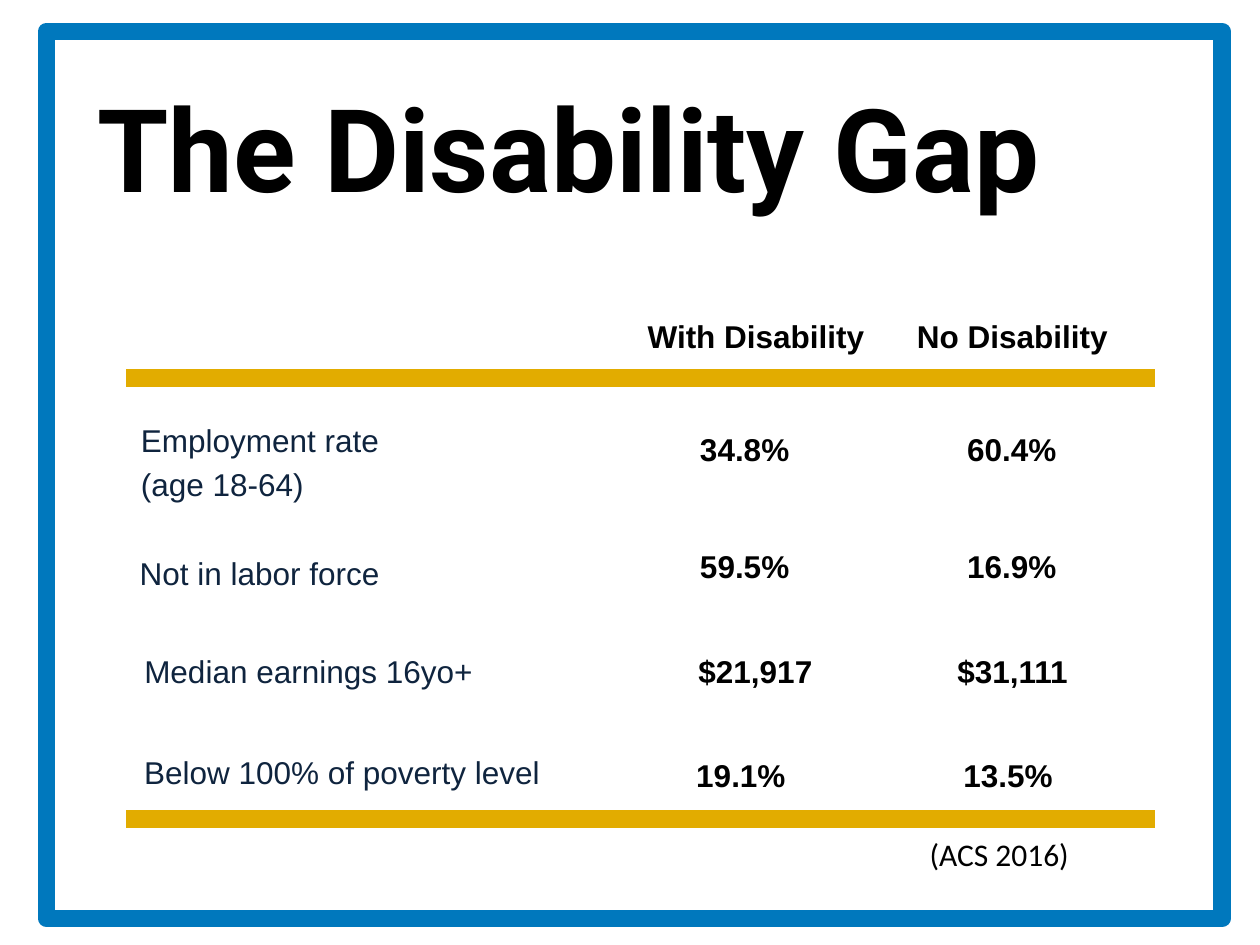
from lxml import etree
from pptx import Presentation
from pptx.dml.color import RGBColor
from pptx.enum.shapes import MSO_CONNECTOR, MSO_SHAPE
from pptx.enum.text import MSO_ANCHOR, MSO_AUTO_SIZE, PP_ALIGN as ALIGN
from pptx.oxml.ns import qn
from pptx.util import Inches, Pt

COLORS = {"black": "000000", "blue": "0078BD", "gold": "E2AC00", "navy": "0F243E"}

presentation = Presentation()
presentation.slide_width = Inches(10)
presentation.slide_height = Inches(7.5)
slide = presentation.slides.add_slide(presentation.slide_layouts[5])


def add_text(text, left, top, width, height, shape=None, size=18, font="Arial",
             color="black", bold=False, align=ALIGN.CENTER, spacing=1.15,
             wrap=False, anchor=MSO_ANCHOR.TOP, fit=MSO_AUTO_SIZE.SHAPE_TO_FIT_TEXT):
    """Write text, one paragraph a line, in a new text box or the given shape."""
    box = [Inches(length) for length in (left, top, width, height)]
    if shape is None:
        shape = slide.shapes.add_textbox(*box)
    else:
        shape.left, shape.top, shape.width, shape.height = box
    frame = shape.text_frame
    frame.text = text
    frame.word_wrap = wrap
    frame.auto_size = fit
    frame.vertical_anchor = anchor
    for paragraph in frame.paragraphs:
        paragraph.alignment = align
        paragraph.line_spacing = spacing
        for run in paragraph.runs:
            run.font.size = Pt(size)
            run.font.name = font
            run.font.bold = bold
            run.font.color.rgb = RGBColor.from_string(COLORS[color])


# Title
add_text("The Disability Gap", 0.67, 0.69, 9.92, 1.08, shape=slide.shapes.title,
         size=66, font="Roboto", bold=True, align=ALIGN.LEFT, spacing=0.9,
         wrap=True, anchor=MSO_ANCHOR.MIDDLE, fit=MSO_AUTO_SIZE.NONE)

# Blue frame
border = slide.shapes.add_shape(MSO_SHAPE.RECTANGLE, Inches(0.37), Inches(0.25),
                                Inches(9.33), Inches(7.04))
border.shadow.inherit = False
border.fill.background()
border.line.color.rgb = RGBColor.from_string(COLORS["blue"])
border.line.width = Pt(10)
etree.SubElement(border.line._get_or_add_ln(), qn("a:round"))

# Gold rules above and below the figures
for y in (3, 6.5):
    rule = slide.shapes.add_connector(MSO_CONNECTOR.STRAIGHT, Inches(1), Inches(y),
                                      Inches(9.17), Inches(y))
    rule.line.color.rgb = RGBColor.from_string(COLORS["gold"])
    rule.line.width = Pt(10)
    etree.SubElement(rule._element.spPr, qn("a:effectLst"))

# Row labels
add_text("Employment rate\n(age 18-64)", 1.02, 3.25, 5, 0.8, color="navy",
         align=ALIGN.LEFT, wrap=True)
for label, left, top, width, align in [
    ("Not in labor force ", 1, 4.3, 2.19, ALIGN.CENTER),
    ("Median earnings 16yo+", 1.02, 5.08, 2.83, ALIGN.RIGHT),
    ("Below 100% of poverty level", 1.03, 5.88, 3.37, ALIGN.CENTER),
]:
    add_text(label, left, top, width, 0.45, color="navy", align=align)

# Column headings and figures: text, left, width
rows = [
    (2.42, ("With Disability", 5.03, 1.94), ("No Disability", 7.17, 1.73)),
    (3.32, ("34.8%", 5.45, 0.92), ("60.4%", 7.57, 0.92)),
    (4.25, ("59.5%", 5.45, 0.92), ("16.9%", 7.57, 0.92)),
    (5.08, ("$21,917", 5.44, 1.11), ("$31,111", 7.49, 1.09)),
    (5.91, ("19.1%", 5.42, 0.92), ("13.5%", 7.54, 0.92)),
]
for top, *cells in rows:
    for text, left, width in cells:
        add_text(text, left, top, width, 0.43, bold=True)

# Source note
add_text("(ACS 2016)", 7.28, 6.58, 1.43, 0.4, font="Calibri", align=ALIGN.LEFT, spacing=1)

presentation.save("out.pptx")
